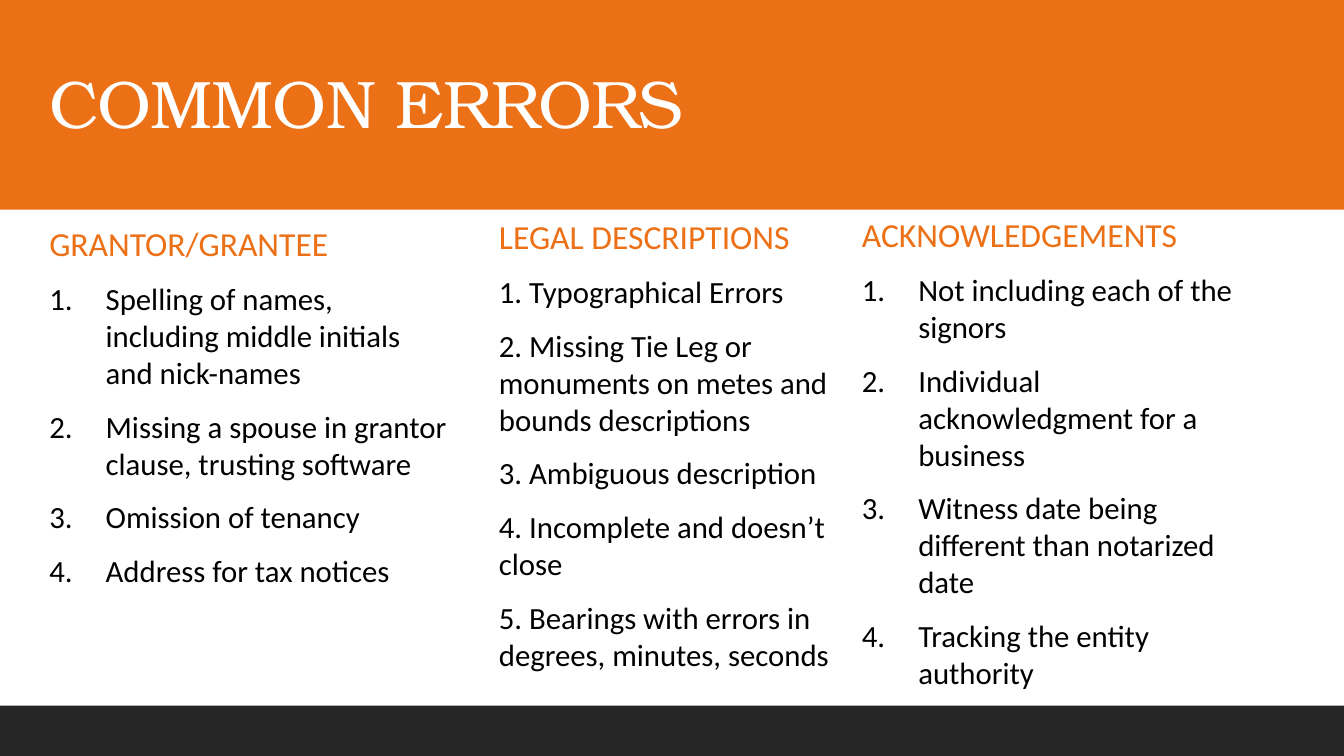
from pptx import Presentation
from pptx.dml.color import RGBColor
from pptx.enum.shapes import MSO_SHAPE as SHAPE
from pptx.enum.text import MSO_ANCHOR as ANCHOR, MSO_AUTO_SIZE as FIT, PP_ALIGN as ALIGN
from pptx.oxml.xmlchemy import OxmlElement
from pptx.util import Inches, Pt

TITLE = "COMMON ERRORS"
TITLE_BOX = (0.39, 0.26, 11, 1.59)

# Columns with "hanging" use automatic numbers; the other has typed ones.
COLUMNS = [
    {"heading": "GRANTOR/GRANTEE", "box": (0.39, 2.16, 4.19, 3.77), "hanging": True,
     "errors": ["Spelling of names, including middle initials and nick-names",
                "Missing a spouse in grantor clause, trusting software",
                "Omission of tenancy",
                "Address for tax notices"]},
    {"heading": "LEGAL DESCRIPTIONS", "box": (4.85, 2.09, 3.81, 4.68), "hanging": False,
     "errors": ["Typographical Errors",
                "Missing Tie Leg or monuments on metes and bounds descriptions",
                "Ambiguous description",
                "Incomplete and doesn’t close",
                "Bearings with errors in degrees, minutes, seconds"]},
    {"heading": "ACKNOWLEDGEMENTS", "box": (8.45, 2.07, 3.9, 4.88), "hanging": True,
     "errors": ["Not including each of the signors",
                "Individual acknowledgment for a business",
                "Witness date being different than notarized date",
                "Tracking the entity authority"]},
]

SLIDE_W, SLIDE_H = 13.33, 7.5
BANNER_H, FOOTER_H = 2.08, 0.5
NUMBER_INDENT = 0.56

ORANGE = RGBColor.from_string("EC7016")
THEME = {
    "banner": ORANGE,
    "footer": RGBColor.from_string("262626"),
    "title": {"name": "TeX Gyre Bonum", "size": Pt(48),
              "color": RGBColor.from_string("FFFFFF")},
    "heading": {"name": "Calibri", "size": Pt(24), "color": ORANGE},
    "error": {"name": "Calibri", "size": Pt(22),
              "color": RGBColor.from_string("000000")},
}


def apply(obj, **values):
    for name, value in values.items():
        setattr(obj, name, value)


def add_run(p, text, style):
    r = p.add_run()
    r.text = text
    for name, value in THEME[style].items():
        if name == "color":
            r.font.color.rgb = value
        else:
            setattr(r.font, name, value)
    return r


def add_band(slide, top, height, color):
    sp = slide.shapes.add_shape(SHAPE.RECTANGLE, 0, Inches(top),
                                Inches(SLIDE_W), Inches(height))
    sp.shadow.inherit = False
    sp.fill.solid()
    sp.fill.fore_color.rgb = color
    sp.line.fill.background()


def number(p):
    """Give the paragraph an automatic number with a hanging indent."""
    pPr = p._p.get_or_add_pPr()
    pPr.set("marL", str(Inches(NUMBER_INDENT)))
    pPr.set("indent", str(-Inches(NUMBER_INDENT)))
    bullet = OxmlElement("a:buAutoNum")
    bullet.set("type", "arabicPeriod")
    pPr.append(bullet)


def place_title(slide):
    sp = slide.shapes.title
    slide.shapes._spTree.append(sp._element)  # in front of the banner
    apply(sp, **dict(zip(("left", "top", "width", "height"), map(Inches, TITLE_BOX))))
    tf = sp.text_frame
    apply(tf, word_wrap=True, auto_size=FIT.NONE, vertical_anchor=ANCHOR.MIDDLE)
    p = tf.paragraphs[0]
    apply(p, alignment=ALIGN.LEFT, line_spacing=0.9, space_after=Pt(6))
    r = add_run(p, TITLE, "title")
    r.font._element.set("spc", "-50")


def add_column(slide, column):
    tf = slide.shapes.add_textbox(*map(Inches, column["box"])).text_frame
    apply(tf, word_wrap=True, auto_size=FIT.SHAPE_TO_FIT_TEXT)
    p = tf.paragraphs[0]
    p.space_before = Pt(12)
    add_run(p, column["heading"], "heading")
    for i, error in enumerate(column["errors"], 1):
        p = tf.add_paragraph()
        p.space_before = Pt(12)
        if column["hanging"]:
            number(p)
            add_run(p, error, "error")
        else:
            add_run(p, f"{i}. {error}", "error")


def main():
    prs = Presentation()
    apply(prs, slide_width=Inches(SLIDE_W), slide_height=Inches(SLIDE_H))
    slide = prs.slides.add_slide(prs.slide_layouts[5])
    add_band(slide, 0, BANNER_H, THEME["banner"])
    place_title(slide)
    add_band(slide, SLIDE_H - FOOTER_H, FOOTER_H, THEME["footer"])
    for column in COLUMNS:
        add_column(slide, column)
    prs.save("out.pptx")


if __name__ == "__main__":
    main()
